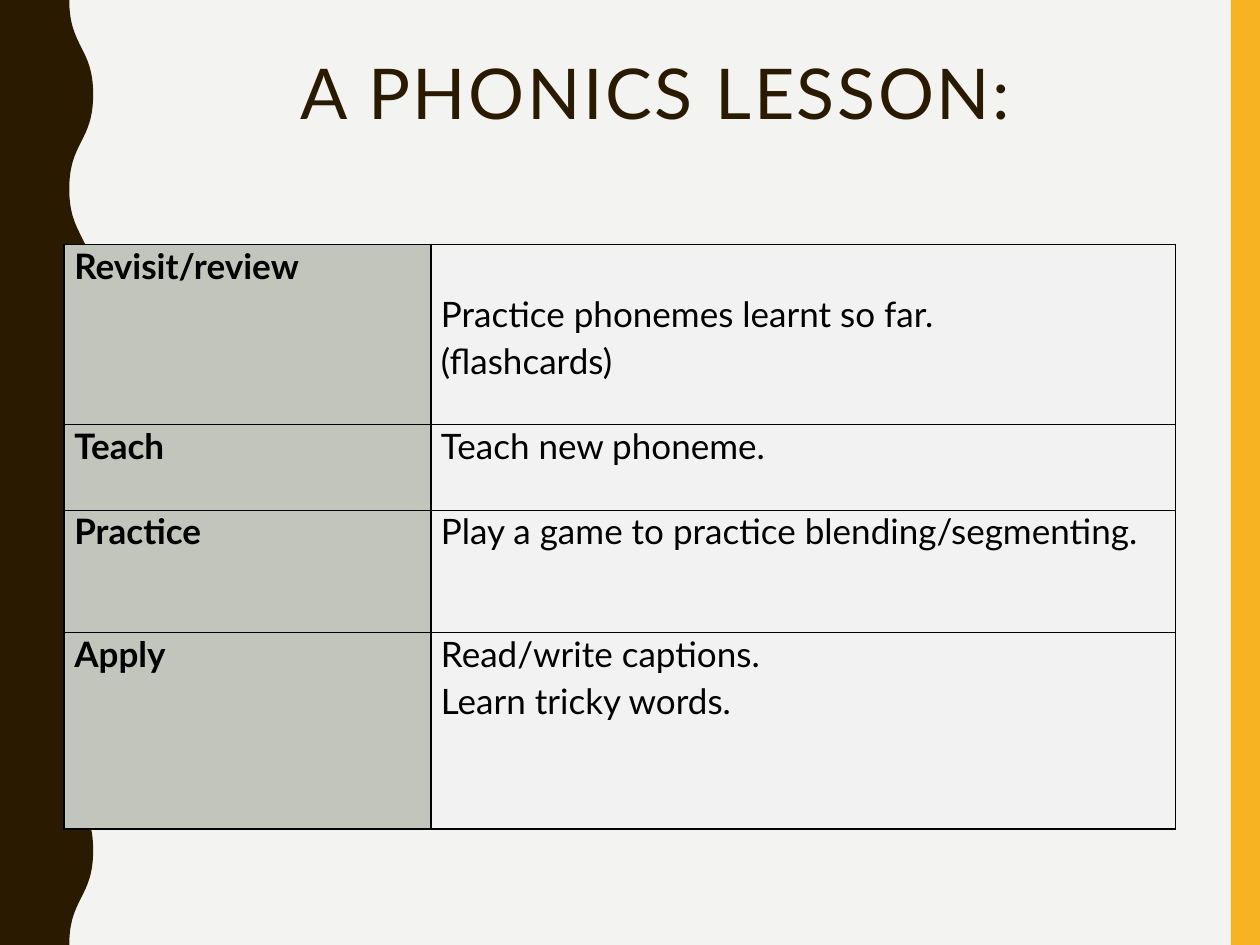
from lxml import etree
from pptx import Presentation
from pptx import util as u
from pptx.dml.color import RGBColor
from pptx.enum import shapes, text
from pptx.oxml import ns

COLORS = {
    "background": "F3F3F2",
    "brown": "2A1A00",
    "yellow": "F8B323",
    "stage": "C2C5BB",
    "activity": "F2F2F2",
    "black": "000000",
}
FONT = "Lato"


def paint(shape, color):
    shape.shadow.inherit = False
    shape.fill.solid()
    shape.fill.fore_color.rgb = RGBColor.from_string(COLORS[color])
    shape.line.fill.background()


def add_run(paragraph, words, size, color, bold=False):
    run = paragraph.add_run()
    run.text = words
    run.font.name = FONT
    run.font.size = u.Pt(size)
    run.font.bold = bold
    run.font.color.rgb = RGBColor.from_string(COLORS[color])
    return run


prs = Presentation()
prs.slide_width, prs.slide_height = u.Inches(10), u.Inches(7.5)
slide = prs.slides.add_slide(prs.slide_layouts[5])
slide.background.fill.solid()
slide.background.fill.fore_color.rgb = RGBColor.from_string(COLORS["background"])

# Yellow band on the right
band = slide.shapes.add_shape(
    shapes.MSO_SHAPE.RECTANGLE, u.Inches(9.77), 0, u.Inches(0.23), prs.slide_height)
paint(band, "yellow")

# Wavy brown edge: turning points alternate between trough and crest
trough, crest, half_wave = u.Inches(0.55), u.Inches(0.74), u.Inches(0.75)
turns = [(crest if i % 2 else trough, i * half_wave) for i in range(11)]
outline = slide.shapes.build_freeform(*turns[0])
outline.add_line_segments(turns[1:] + [(0, prs.slide_height), (0, 0)], close=True)
wave = outline.convert_to_shape()
paint(wave, "brown")

# Bend the straight segments between turning points into S-curves
segments = list(wave._element.iter(ns.qn("a:lnTo")))
for segment, (x1, y1), (x2, y2) in zip(segments, turns, turns[1:]):
    middle = (y1 + y2) // 2
    curve = etree.Element(ns.qn("a:cubicBezTo"))
    for x, y in ((x1, middle), (x2, middle), (x2, y2)):
        etree.SubElement(curve, ns.qn("a:pt"), x=str(x), y=str(y))
    segment.getparent().replace(segment, curve)

# Title
title = slide.shapes.title
title.left, title.top = u.Inches(1.03), u.Inches(0.42)
title.width, title.height = u.Inches(8.35), u.Inches(1.63)
title.text_frame.vertical_anchor = text.MSO_ANCHOR.TOP
title.text_frame.word_wrap = True
heading = title.text_frame.paragraphs[0]
heading.alignment = text.PP_ALIGN.CENTER
heading.line_spacing = 0.9
heading_run = add_run(heading, "A PHONICS LESSON:", 40, "brown")
heading_run.font._element.set("spc", "150")

# Lesson table: stage, activities, row height, space above the activities
lesson = [
    ("Revisit/review", ["Practice phonemes learnt so far.", "(flashcards)"], 1.43, 0.38),
    ("Teach", ["Teach new phoneme."], 0.68, 0),
    ("Practice", ["Play a game to practice blending/segmenting."], 0.97, 0),
    ("Apply", ["Read/write captions.", "Learn tricky words."], 1.56, 0),
]
table = slide.shapes.add_table(
    len(lesson), 2, u.Inches(0.51), u.Inches(1.94), u.Inches(8.82), u.Inches(4.64)).table
table.first_row = table.horz_banding = False
table.columns[0].width, table.columns[1].width = u.Inches(2.91), u.Inches(5.91)

for row, (stage, activities, height, space_above) in enumerate(lesson):
    table.rows[row].height = u.Inches(height)
    columns = [([stage], "stage", 0), (activities, "activity", space_above)]
    for column, (lines, fill, top) in enumerate(columns):
        cell = table.cell(row, column)
        cell.margin_left, cell.margin_right = u.Inches(0.08), u.Inches(0.07)
        cell.margin_top, cell.margin_bottom = u.Inches(top), 0
        # Borders precede the fill in the cell properties
        properties = cell._tc.get_or_add_tcPr()
        for side in ("lnL", "lnR", "lnT", "lnB"):
            border = etree.SubElement(properties, ns.qn(f"a:{side}"), w=str(u.Pt(1)))
            solid = etree.SubElement(border, ns.qn("a:solidFill"))
            etree.SubElement(solid, ns.qn("a:srgbClr"), val=COLORS["black"])
        cell.fill.solid()
        cell.fill.fore_color.rgb = RGBColor.from_string(COLORS[fill])
        for index, line in enumerate(lines):
            frame = cell.text_frame
            paragraph = frame.add_paragraph() if index else frame.paragraphs[0]
            paragraph.space_before = u.Pt(3)
            add_run(paragraph, line, 20, "black", bold=column == 0)

prs.save("out.pptx")
